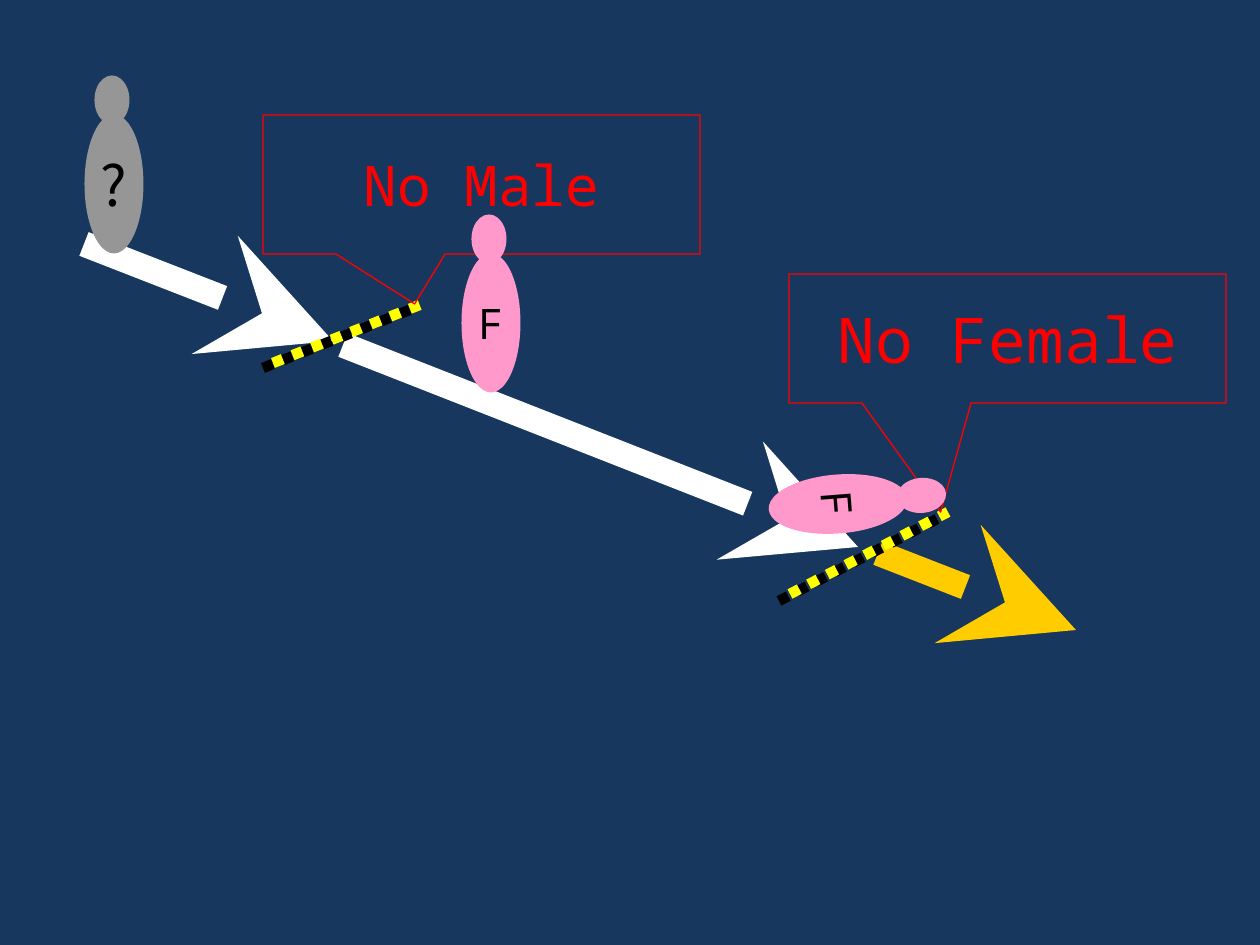
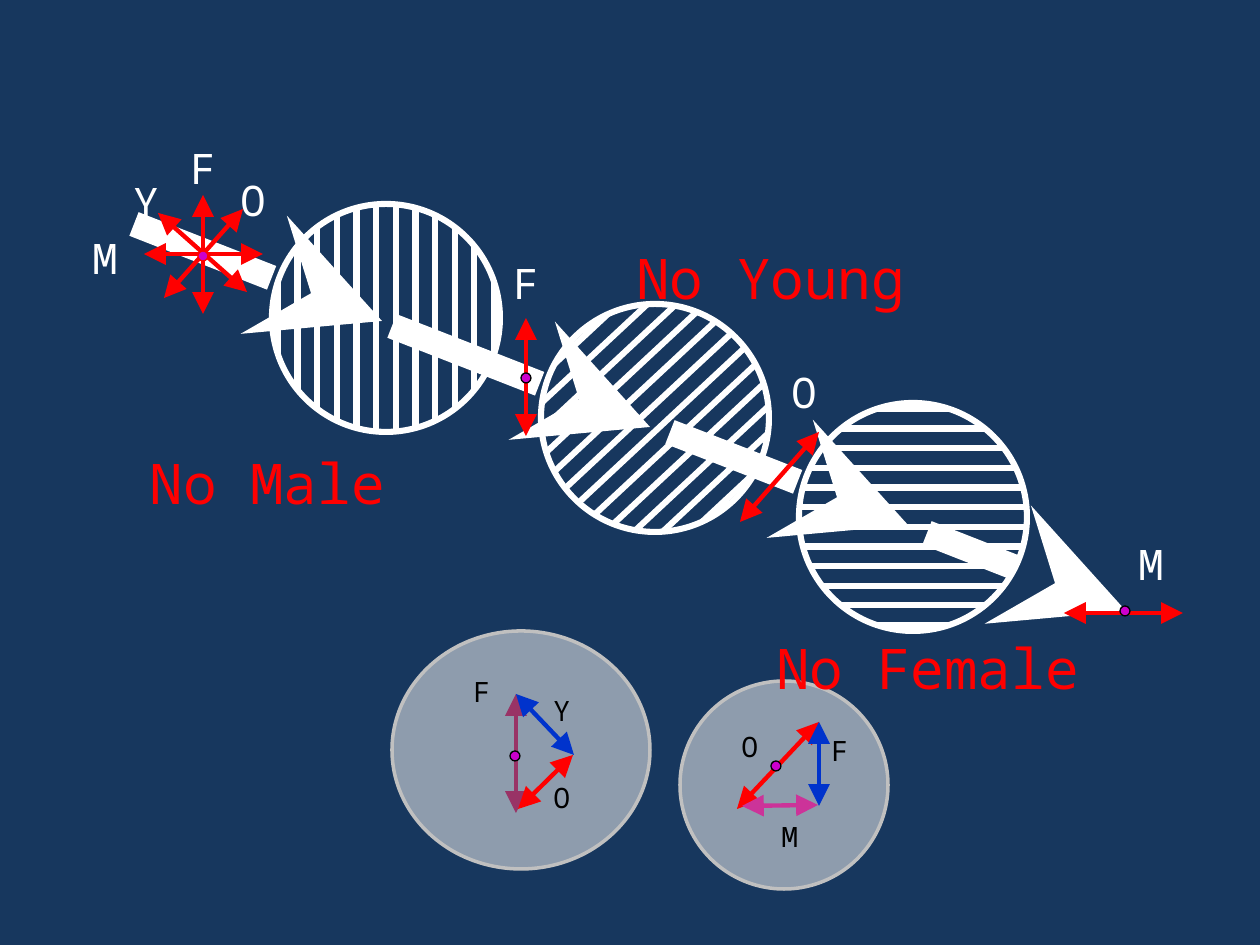
from math import cos, radians, sin, sqrt

from lxml.etree import SubElement
from pptx import Presentation
from pptx.dml.color import RGBColor
from pptx.enum.dml import MSO_LINE
from pptx.enum.shapes import MSO_CONNECTOR, MSO_SHAPE
from pptx.enum.text import MSO_ANCHOR, MSO_AUTO_SIZE, PP_ALIGN
from pptx.oxml.ns import qn
from pptx.util import Emu, Pt

STRAIGHT = MSO_CONNECTOR.STRAIGHT
ELLIPSE = MSO_SHAPE.OVAL
CALLOUT = MSO_SHAPE.RECTANGULAR_CALLOUT
DOTTED = MSO_LINE.ROUND_DOT
CENTER = PP_ALIGN.CENTER
MIDDLE = MSO_ANCHOR.MIDDLE
GROW = MSO_AUTO_SIZE.SHAPE_TO_FIT_TEXT

EMU_PER_PX = 914400 / 126
MONO = "Noto Sans Mono"
KOREAN = "Noto Sans CJK KR"

NAVY, WHITE, BLACK, RED = "17375E", "FFFFFF", "000000", "FF0000"
GOLD, YELLOW, PINK, GRAY = "FFCC00", "FFFF00", "FF99CC", "969696"
MAGENTA, BLUE, PLUM, ROSE = "CC00CC", "0033CC", "993366", "CC3399"
LENS_FILL, LENS_EDGE = "EAEAEA", "C0C0C0"


def px(length):
    return Emu(round(length * EMU_PER_PX))


def color(code):
    return RGBColor.from_string(code)


class Deck:
    """Holds the presentation, its style and the place where shapes go."""

    def __init__(self):
        self.presentation = Presentation()
        self.presentation.slide_width = px(1260)
        self.presentation.slide_height = px(945)

    def new_slide(self):
        blank = self.presentation.slide_layouts[6]
        self.slide = self.presentation.slides.add_slide(blank)
        background = self.slide.background.fill
        background.solid()
        background.fore_color.rgb = color(NAVY)
        self.end_group()

    def begin_group(self):
        self.shapes = self.slide.shapes.add_group_shape().shapes

    def end_group(self):
        self.shapes = self.slide.shapes

    def line(self, start, end, stroke, width, dash=None, head=None, tail=None):
        connector = self.shapes.add_connector(
            STRAIGHT, *(px(value) for value in (*start, *end)))
        connector.line.color.rgb = color(stroke)
        connector.line.width = Pt(width)
        if dash:
            connector.line.dash_style = dash
        properties = connector.element.spPr
        for tag, kind in (("a:headEnd", head), ("a:tailEnd", tail)):
            if kind:
                SubElement(properties.find(qn("a:ln")), qn(tag),
                           type=kind, w="lg", len="lg")
        SubElement(properties, qn("a:effectLst"))

    def beam(self, start, end, stroke=WHITE):
        self.line(start, end, stroke, 14.5, tail="stealth")

    def axis(self, start, end, stroke=RED):
        """Draw a polarization axis, with an arrowhead at both ends."""
        self.line(start, end, stroke, 2.5, head="triangle", tail="triangle")

    def barrier(self, start, end, shift):
        """Interleave black and yellow dots, the yellow ones moved by shift."""
        self.begin_group()
        moved = [[a + b for a, b in zip(point, shift)] for point in (start, end)]
        self.line(start, end, BLACK, 6, DOTTED)
        self.line(*moved, YELLOW, 6, DOTTED)
        self.end_group()

    def shape(self, kind, box, fill=None, stroke=None, width=0.75, alpha=None):
        shape = self.shapes.add_shape(kind, *(px(value) for value in box))
        shape.shadow.inherit = False
        if fill:
            shape.fill.solid()
            shape.fill.fore_color.rgb = color(fill)
        else:
            shape.fill.background()
        if alpha:
            fill_color = shape.element.spPr.find(qn("a:solidFill"))[0]
            SubElement(fill_color, qn("a:alpha"), val=str(alpha * 1000))
        if stroke:
            shape.line.color.rgb = color(stroke)
            shape.line.width = Pt(width)
        else:
            shape.line.fill.background()
        return shape

    def ellipse(self, center, size, **style):
        (x, y), (width, height) = center, size
        box = (x - width / 2, y - height / 2, width, height)
        return self.shape(ELLIPSE, box, **style)

    def set_text(self, shape, text, size, ink, font=MONO):
        paragraph = shape.text_frame.paragraphs[0]
        paragraph.text = text
        span = paragraph.runs[0].font
        span.name, span.size, span.color.rgb = font, Pt(size), color(ink)
        return paragraph

    def centered(self, shape, text, size, ink, font=MONO, wrap=True):
        shape.text_frame.word_wrap = wrap
        shape.text_frame.vertical_anchor = MIDDLE
        self.set_text(shape, text, size, ink, font).alignment = CENTER

    def label(self, text, x, y, width, size, ink):
        box = self.shapes.add_textbox(px(x), px(y), px(width), px(2 * size + 15))
        box.text_frame.word_wrap = True
        box.text_frame.auto_size = GROW
        self.set_text(box, text, size, ink)

    def callout(self, text, size, box, tip):
        shape = self.shape(CALLOUT, box, stroke=RED)
        shape.adjustments[0], shape.adjustments[1] = tip
        self.centered(shape, text, size, RED)

    def person(self, letter, center, fill, angle=0, size=24, font=MONO):
        """Draw a head and a lettered body, turned about the body's center."""
        turn = radians(angle)
        across, up = -2, -84
        head_center = (center[0] + across * cos(turn) - up * sin(turn),
                       center[1] + across * sin(turn) + up * cos(turn))
        self.begin_group()
        head = self.ellipse(head_center, (35, 49), fill=fill)
        body = self.ellipse(center, (59, 139), fill=fill)
        head.rotation = body.rotation = angle
        self.centered(body, letter, size, BLACK, font, wrap=False)
        self.end_group()

    def photon(self, center, stroke=BLACK):
        self.ellipse(center, (10, 10), fill=MAGENTA, stroke=stroke)

    def lens(self, center, size):
        self.ellipse(center, size, fill=LENS_FILL, stroke=LENS_EDGE,
                     width=2, alpha=57)

    def polarizer(self, center, angle):
        """Draw a circle with evenly spaced chords; angle 0 is vertical."""
        radius, count, gap = 114, 12, 19.65
        x, y = center
        across, down = cos(radians(angle)), sin(radians(angle))
        self.begin_group()
        self.ellipse(center, (2 * radius, 2 * radius), stroke=WHITE, width=3.5)
        for number in range(count):
            offset = (number - (count - 1) / 2) * gap
            half = sqrt(radius ** 2 - offset ** 2)
            ends = [(x + offset * across - reach * down,
                     y + offset * down + reach * across)
                    for reach in (-half, half)]
            self.line(*ends, WHITE, 3.5)
        self.end_group()


def build_people_slide(deck):
    deck.new_slide()
    deck.beam((84, 244), (333, 341))
    deck.beam((878, 553), (1076, 630), GOLD)
    deck.beam((343, 345), (858, 547))
    deck.barrier((263, 368), (412, 309), (10, -5))
    deck.barrier((779, 601), (937, 519), (11, -7))
    deck.callout("No Male", 32, (263, 115, 437, 139), (-0.153, 0.86))
    deck.callout("No Female", 36, (789, 274, 437, 129), (-0.153, 1.347))
    deck.person("?", (114, 184), GRAY, size=32, font=KOREAN)
    deck.person("F", (491, 323), PINK)
    deck.person("F", (838, 504), PINK, angle=85.5)


def build_polarizer_slide(deck):
    deck.new_slide()
    deck.lens((784, 785), (208, 208))
    deck.lens((521, 750), (258, 238))

    deck.beam((134, 224), (382, 321))
    deck.polarizer((913, 517), 90)
    deck.beam((392, 326), (650, 427))
    deck.beam((927, 533), (1126, 611))
    for start, end in (((203, 195), (203, 314)), ((263, 254), (144, 254)),
                       ((243, 209), (164, 298)), ((247, 292), (158, 213)),
                       ((526, 318), (526, 436))):
        deck.axis(start, end)
    deck.photon((526, 378))
    deck.photon((203, 256), RED)
    deck.polarizer((655, 418), 47)
    deck.axis((1183, 613), (1064, 613))
    deck.photon((1125, 611))
    deck.beam((670, 432), (908, 525))

    deck.axis((819, 722), (737, 809))
    deck.photon((776, 766))
    deck.axis((818, 805), (742, 806), ROSE)
    deck.axis((819, 806), (819, 722), BLUE)
    deck.polarizer((386, 318), 0)

    deck.begin_group()
    deck.axis((516, 694), (516, 813), PLUM)
    deck.photon((515, 756))
    deck.axis((573, 755), (518, 809))
    deck.axis((574, 755), (516, 694), BLUE)
    deck.end_group()

    for letter, x, y in (("F", 461, 668), ("O", 541, 774), ("Y", 541, 687),
                         ("O", 729, 723), ("M", 769, 813), ("F", 819, 727)):
        deck.label(letter, x, y, 55, 16, BLACK)
    for letter, x, y in (("Y", 121, 170), ("F", 178, 136), ("O", 228, 168),
                         ("M", 80, 226), ("F", 501, 251), ("O", 779, 360),
                         ("M", 1126, 532)):
        deck.label(letter, x, y, 59, 24, WHITE)
    deck.axis((819, 432), (740, 522))
    for text, x, y, width in (("No Male", 137, 442, 387),
                              ("No Female", 764, 627, 417),
                              ("No Young", 624, 237, 427)):
        deck.label(text, x, y, width, 32, RED)


def main():
    deck = Deck()
    build_people_slide(deck)
    build_polarizer_slide(deck)
    deck.presentation.save("out.pptx")


if __name__ == "__main__":
    main()
